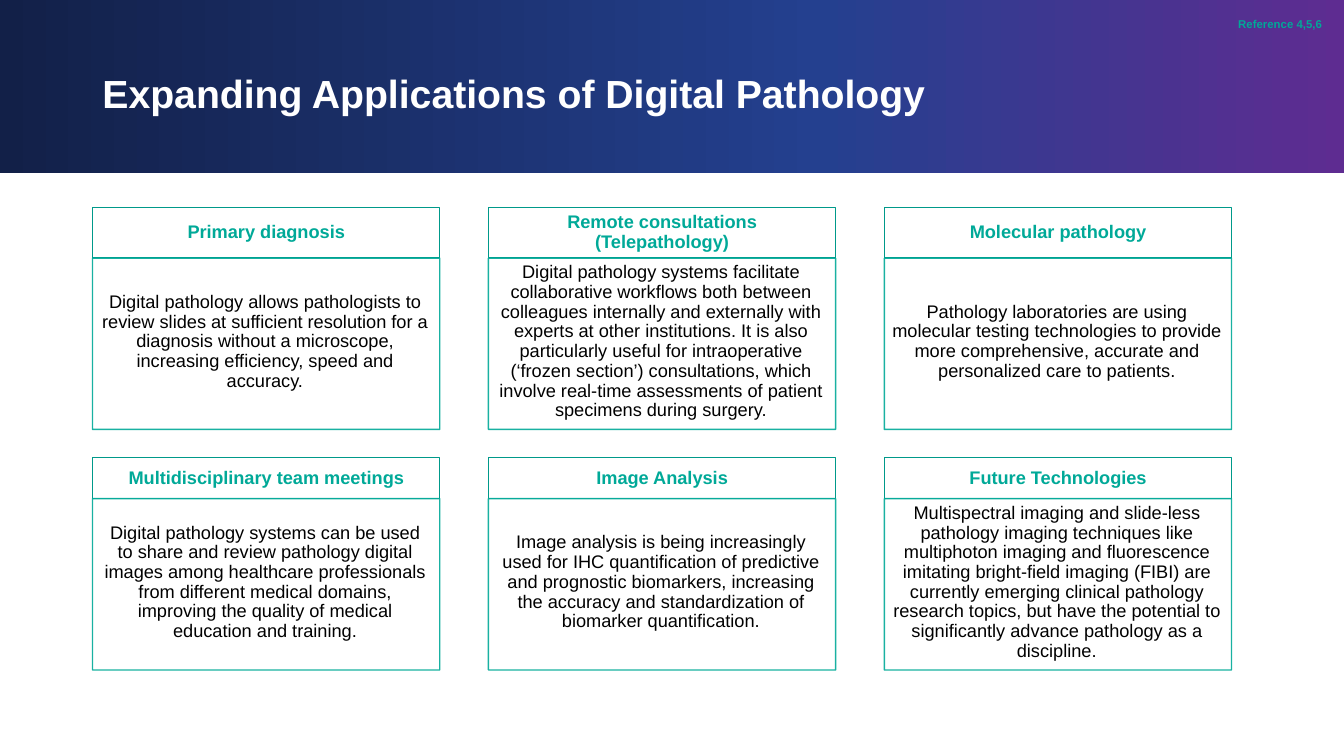
from copy import deepcopy

from pptx import Presentation
from pptx.dml.color import RGBColor
from pptx.enum.shapes import MSO_SHAPE
from pptx.enum.text import MSO_ANCHOR, PP_ALIGN
from pptx.oxml.ns import qn
from pptx.util import Pt
from lxml.etree import SubElement

WIDTH, HEIGHT = 960, 540
BANNER_HEIGHT = 123.8
BANNER_STOPS = [(0, "5E2C91"), (0.39, "24408F"), (1, "122048")]

CARD_LEFT, CARD_PITCH, CARD_WIDTH = 66.1, 282.8, 248
BODY_HEIGHT = 122.4
# Each row: top, header height, cards as (heading, body)
CARD_ROWS = [
    (148.3, 36.1, [
        ("Primary diagnosis",
         "Digital pathology allows pathologists to review slides at sufficient resolution "
         "for a diagnosis without a microscope, increasing efficiency, speed and accuracy."),
        ("Remote consultations (Telepathology)",
         "Digital pathology systems facilitate collaborative workflows both between "
         "colleagues internally and externally with experts at other institutions. It is "
         "also particularly useful for intraoperative (‘frozen section’) consultations, "
         "which involve real-time assessments of patient specimens during surgery."),
        ("Molecular pathology",
         "Pathology laboratories are using molecular testing technologies to provide more "
         "comprehensive, accurate and personalized care to patients."),
    ]),
    (326.9, 29.3, [
        ("Multidisciplinary team meetings",
         "Digital pathology systems can be used to share and review pathology digital "
         "images among healthcare professionals from different medical domains, improving "
         "the quality of medical education and training."),
        ("Image Analysis",
         "Image analysis is being increasingly used for IHC quantification of predictive "
         "and prognostic biomarkers, increasing the accuracy and standardization of "
         "biomarker quantification."),
        ("Future Technologies",
         "Multispectral imaging and slide-less pathology imaging techniques like "
         "multiphoton imaging and fluorescence imitating bright-field imaging (FIBI) are "
         "currently emerging clinical pathology research topics, but have the potential "
         "to significantly advance pathology as a discipline."),
    ]),
]


def rgb(hex_colour):
    return RGBColor.from_string(hex_colour)


def write(shape, text, size=13, colour="000000", bold=False, align=PP_ALIGN.CENTER,
          anchor=MSO_ANCHOR.MIDDLE, insets=(7.2, 3.6, 7.2, 3.6), raised=0):
    """Fill a shape with one paragraph; insets run left, top, right, bottom."""
    frame = shape.text_frame
    frame.word_wrap = True
    frame.vertical_anchor = anchor
    (frame.margin_left, frame.margin_top,
     frame.margin_right, frame.margin_bottom) = map(Pt, insets)
    paragraph = frame.paragraphs[0]
    paragraph.alignment = align
    paragraph.line_spacing = 0.9
    run = paragraph.add_run()
    run.text = text
    run.font.name = "Arial"
    run.font.size = Pt(size)
    run.font.bold = bold
    run.font.color.rgb = rgb(colour)
    if raised:
        run._r.get_or_add_rPr().set("baseline", str(raised * 1000))


class PathologySlide:
    accent = "00A998"
    header_line = "00998A"

    def __init__(self, deck):
        self.slide = deck.slides.add_slide(deck.slide_layouts[6])

    def rectangle(self, left, top, width, height):
        box = self.slide.shapes.add_shape(
            MSO_SHAPE.RECTANGLE, Pt(left), Pt(top), Pt(width), Pt(height))
        box.shadow.inherit = False
        return box

    def banner(self):
        band = self.rectangle(0, 0, WIDTH, BANNER_HEIGHT)
        band.line.fill.background()
        band.fill.gradient()
        band.fill.gradient_angle = 180
        stop_list = band._element.spPr.find(".//" + qn("a:gsLst"))
        stop_list.append(deepcopy(stop_list[0]))
        for stop, (position, colour) in zip(band.fill.gradient_stops, BANNER_STOPS):
            stop.position = position
            stop.color.rgb = rgb(colour)

    def label(self, left, top, width, height, text, **style):
        box = self.slide.shapes.add_textbox(Pt(left), Pt(top), Pt(width), Pt(height))
        write(box, text, **style)

    def panel(self, left, top, height, line_colour, text, opacity=100, **style):
        box = self.rectangle(left, top, CARD_WIDTH, height)
        box.fill.solid()
        box.fill.fore_color.rgb = rgb("FFFFFF")
        box.line.color.rgb = rgb(line_colour)
        box.line.width = Pt(1)
        if opacity < 100:
            for colour in box._element.spPr.iter(qn("a:srgbClr")):
                SubElement(colour, qn("a:alpha"), val=str(opacity * 1000))
        write(box, text, **style)

    def card(self, left, top, header_height, heading, body):
        self.panel(left, top, header_height, self.header_line, heading,
                   colour=self.accent, bold=True, insets=(7.28, 4.16, 7.28, 4.16))
        self.panel(left, top + header_height, BODY_HEIGHT, self.accent, body,
                   opacity=90, insets=(5.46, 5.46, 7.28, 8.19))


def main():
    deck = Presentation()
    deck.slide_width, deck.slide_height = Pt(WIDTH), Pt(HEIGHT)
    page = PathologySlide(deck)
    page.banner()
    page.label(66.1, 22.3, 814.3, 92.2, "Expanding Applications of Digital Pathology",
               size=28, colour="FFFFFF", bold=True, align=PP_ALIGN.LEFT)
    page.label(807.4, 8.6, 144, 20.2, "Reference 4,5,6", size=14, colour=page.accent,
               bold=True, align=PP_ALIGN.RIGHT, anchor=MSO_ANCHOR.TOP, raised=30)
    for top, header_height, cards in CARD_ROWS:
        for column, (heading, body) in enumerate(cards):
            page.card(CARD_LEFT + column * CARD_PITCH, top, header_height, heading, body)
    deck.save("out.pptx")


if __name__ == "__main__":
    main()
